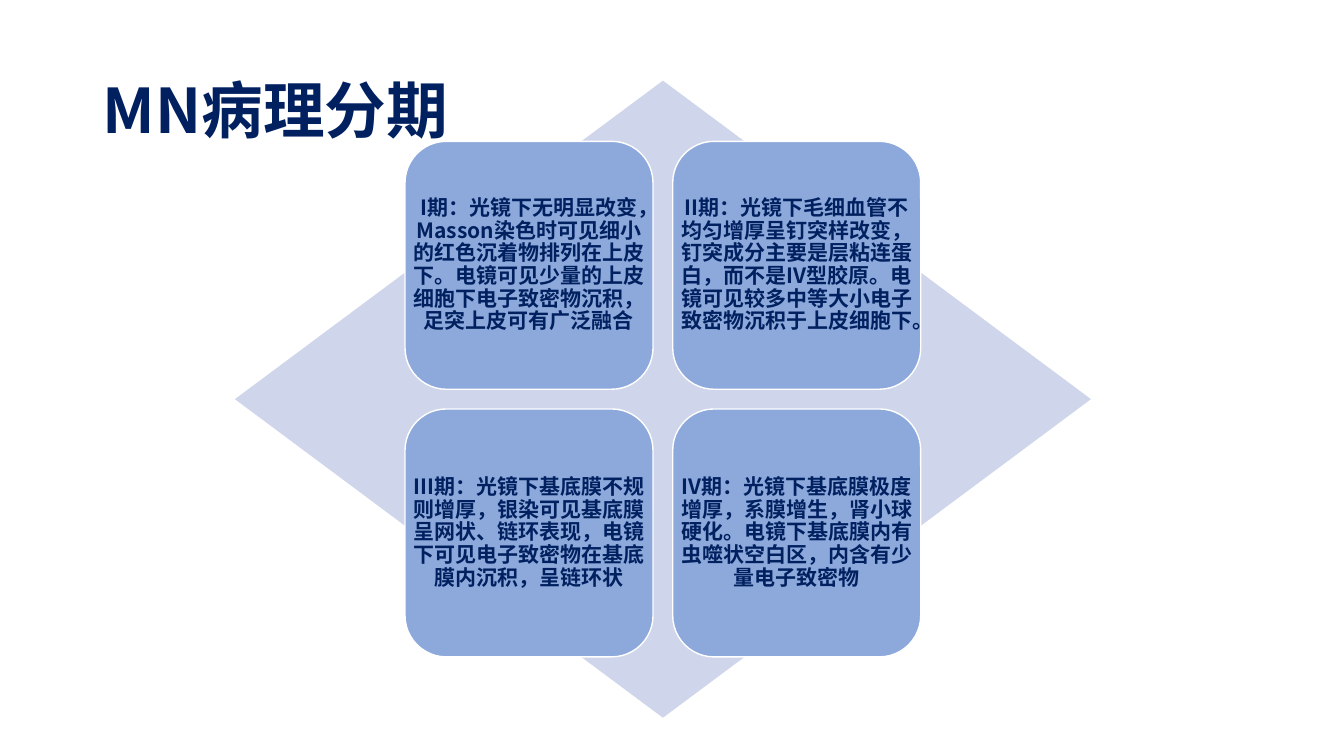
from lxml.etree import SubElement
from pptx import Presentation
from pptx.dml.color import RGBColor
from pptx.enum.shapes import MSO_SHAPE as Preset
from pptx.enum.text import MSO_ANCHOR as Anchor, PP_ALIGN as Align
from pptx.oxml.ns import qn
from pptx.util import Inches, Pt

FONT = "Noto Sans CJK SC"
NAVY, BLUE, PALE, WHITE = "002060", "8DA9DB", "CFD5EA", "FFFFFF"

STAGES = [
    "I期：光镜下无明显改变，Masson染色时可见细小的红色沉着物排列在上皮下。"
    "电镜可见少量的上皮细胞下电子致密物沉积，足突上皮可有广泛融合",
    "II期：光镜下毛细血管不均匀增厚呈钉突样改变，钉突成分主要是层粘连蛋白，"
    "而不是IV型胶原。电镜可见较多中等大小电子致密物沉积于上皮细胞下。",
    "III期：光镜下基底膜不规则增厚，银染可见基底膜呈网状、链环表现，"
    "电镜下可见电子致密物在基底膜内沉积，呈链环状",
    "IV期：光镜下基底膜极度增厚，系膜增生，肾小球硬化。"
    "电镜下基底膜内有虫噬状空白区，内含有少量电子致密物",
]


def color(value):
    return RGBColor.from_string(value)


def add_text(slide, text, box, size, align=Align.LEFT, margins=(0.1, 0.05)):
    frame = slide.shapes.add_textbox(*map(Inches, box)).text_frame
    frame.word_wrap = True
    frame.vertical_anchor = Anchor.MIDDLE
    frame.margin_left = frame.margin_right = Inches(margins[0])
    frame.margin_top = frame.margin_bottom = Inches(margins[1])
    paragraph = frame.paragraphs[0]
    paragraph.alignment = align
    paragraph.line_spacing = 0.9
    run = paragraph.add_run()
    run.text = text
    font = run.font
    font.name, font.size, font.bold = FONT, Pt(size), True
    font.color.rgb = color(NAVY)
    # East Asian typeface
    SubElement(run._r.get_or_add_rPr(), qn("a:ea"), typeface=FONT)


def add_panel(slide, preset, box, fill, line=None):
    shape = slide.shapes.add_shape(preset, *map(Inches, box))
    shape.shadow.inherit = False
    shape.fill.solid()
    shape.fill.fore_color.rgb = color(fill)
    if line:
        shape.line.color.rgb = color(line)
        shape.line.width = Pt(1)
    else:
        shape.line.fill.background()


def add_stage_matrix(slide, box, card=2.46, gap=0.195):
    left, top, width, height = box
    add_panel(slide, Preset.DIAMOND, box, PALE)
    # Two by two cards centred on the diamond
    grid = 2 * card + gap
    for index, stage in enumerate(STAGES):
        row, column = divmod(index, 2)
        card_box = (
            left + (width - grid) / 2 + column * (card + gap),
            top + (height - grid) / 2 + row * (card + gap),
            card,
            card,
        )
        add_panel(slide, Preset.ROUNDED_RECTANGLE, card_box, BLUE, WHITE)
        add_text(slide, stage, card_box, 15, Align.CENTER, (0.06, 0.06))


def main():
    presentation = Presentation()
    presentation.slide_width = Inches(13.33)
    presentation.slide_height = Inches(7.5)
    slide = presentation.slides.add_slide(presentation.slide_layouts[6])
    add_text(slide, "MN病理分期", (0.92, 0.4, 11.5, 1.45), 44)
    add_stage_matrix(slide, (2.33, 0.8, 8.49, 6.32))
    presentation.save("out.pptx")


if __name__ == "__main__":
    main()
